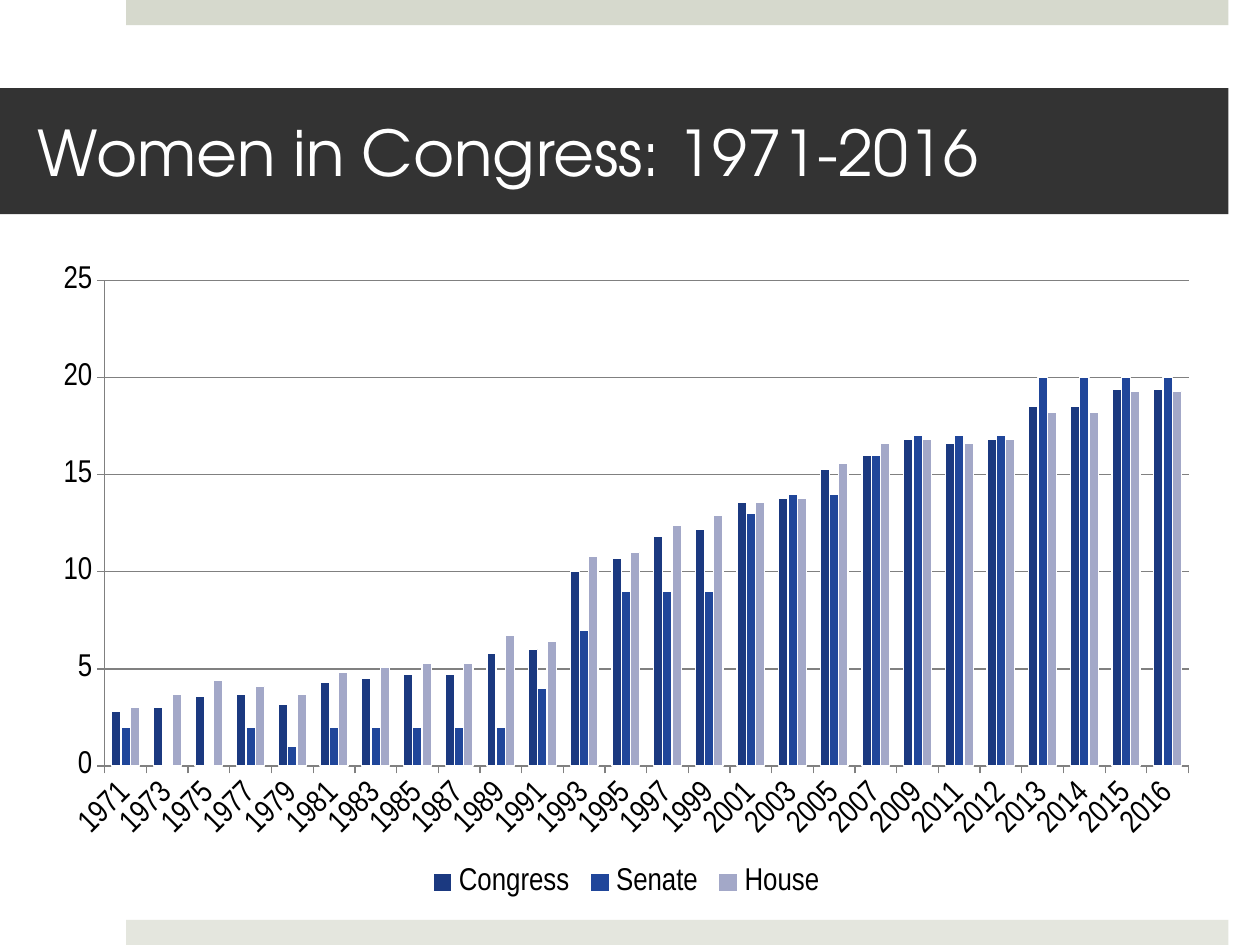
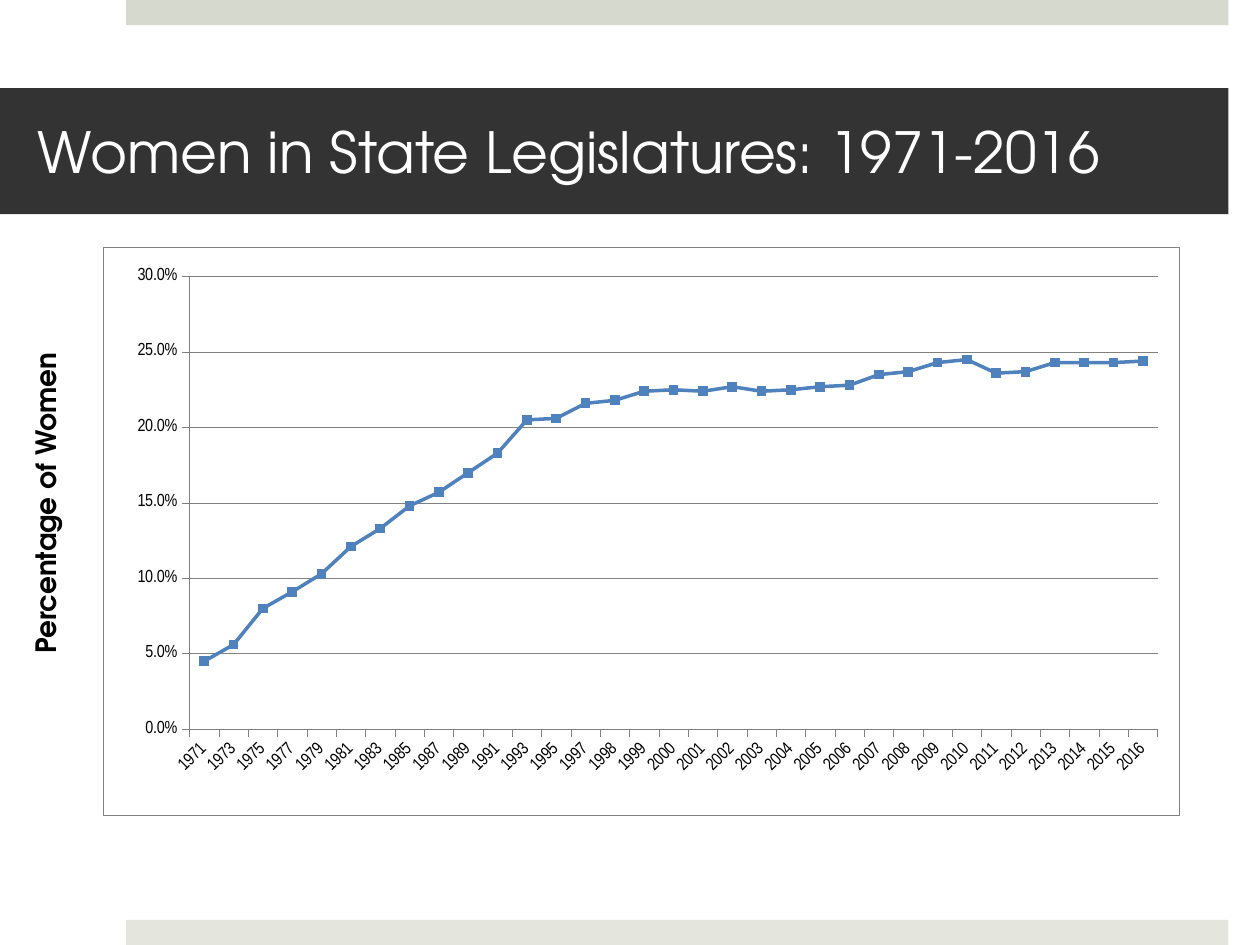
from lxml import etree
from pptx import Presentation
from pptx.chart.data import CategoryChartData
from pptx.dml.color import RGBColor
from pptx.enum.chart import XL_CHART_TYPE, XL_LEGEND_POSITION, XL_MARKER_STYLE, XL_TICK_MARK
from pptx.enum.shapes import MSO_SHAPE
from pptx.enum.text import MSO_ANCHOR, PP_ALIGN
from pptx.oxml import parse_xml
from pptx.oxml.ns import nsdecls, qn
from pptx.util import Inches, Pt

COLUMNS = XL_CHART_TYPE.COLUMN_CLUSTERED
LINE_MARKERS = XL_CHART_TYPE.LINE_MARKERS
BOTTOM = XL_LEGEND_POSITION.BOTTOM
SQUARE = XL_MARKER_STYLE.SQUARE
OUTSIDE = XL_TICK_MARK.OUTSIDE
RECTANGLE = MSO_SHAPE.RECTANGLE
MIDDLE = MSO_ANCHOR.MIDDLE
LEFT, CENTER = PP_ALIGN.LEFT, PP_ALIGN.CENTER

WHITE = RGBColor(0xFF, 0xFF, 0xFF)
BLACK = RGBColor(0x00, 0x00, 0x00)
CHARCOAL = RGBColor(0x33, 0x33, 0x33)
TOP_SAGE = RGBColor(0xD6, 0xD9, 0xCD)
BOTTOM_SAGE = RGBColor(0xE4, 0xE6, 0xDE)
GRAY = RGBColor(0x80, 0x80, 0x80)
NAVY = RGBColor(0x1B, 0x39, 0x80)
BLUE = RGBColor(0x20, 0x46, 0x9A)
LAVENDER = RGBColor(0xA3, 0xA8, 0xC8)
STEEL_BLUE = RGBColor(0x4F, 0x81, 0xBD)

HEADING_FONT = "TeX Gyre Adventor"
CHART_FONT = "Arial Narrow"

CONGRESS_YEARS = [*range(1971, 2012, 2), *range(2012, 2017)]
CONGRESS_SERIES = [
    ("Congress", NAVY, [
        2.8, 3, 3.6, 3.7, 3.2, 4.3, 4.5, 4.7, 4.7, 5.8, 6, 10, 10.7, 11.8, 12.2, 13.6,
        13.8, 15.3, 16, 16.8, 16.6, 16.8, 18.5, 18.5, 19.4, 19.4]),
    ("Senate", BLUE, [
        2, 0, 0, 2, 1, 2, 2, 2, 2, 2, 4, 7, 9, 9, 9, 13,
        14, 14, 16, 17, 17, 17, 20, 20, 20, 20]),
    ("House", LAVENDER, [
        3, 3.7, 4.4, 4.1, 3.7, 4.8, 5.1, 5.3, 5.3, 6.7, 6.4, 10.8, 11, 12.4, 12.9, 13.6,
        13.8, 15.6, 16.6, 16.8, 16.6, 16.8, 18.2, 18.2, 19.3, 19.3]),
]
STATE_YEARS = [*range(1971, 1998, 2), *range(1998, 2017)]
STATE_SERIES = [
    ("Series 1", STEEL_BLUE, [
        0.045, 0.056, 0.08, 0.091, 0.103, 0.121, 0.133, 0.148, 0.157, 0.17, 0.183,
        0.205, 0.206, 0.216, 0.218, 0.224, 0.225, 0.224, 0.227, 0.224, 0.225,
        0.227, 0.228, 0.235, 0.237, 0.243, 0.245, 0.236, 0.237, 0.243, 0.243,
        0.243, 0.244]),
]


def apply_format(target, values):
    for name, value in values.items():
        setattr(target, name, value)


def set_line(line, color, width):
    line.color.rgb = color
    line.width = Pt(width)


def add_band(slide, box, color):
    band = slide.shapes.add_shape(RECTANGLE, *map(Inches, box))
    band.shadow.inherit = False
    band.fill.solid()
    band.fill.fore_color.rgb = color
    band.line.fill.background()
    return band


def write_text(shape, text, alignment, color, **font_values):
    paragraph = shape.text_frame.paragraphs[0]
    paragraph.alignment = alignment
    run = paragraph.add_run()
    run.text = text
    run.font.color.rgb = color
    apply_format(run.font, {"name": HEADING_FONT, **font_values})


def add_title_slide(presentation, title, size):
    """Add a slide with the shared edge bands and title bar."""
    slide = presentation.slides.add_slide(presentation.slide_layouts[6])
    add_band(slide, (1, 0, 8.75, 0.2), TOP_SAGE)
    add_band(slide, (1, 7.3, 8.75, 0.2), BOTTOM_SAGE)
    title_bar = add_band(slide, (0, 0.7, 9.75, 1), CHARCOAL)
    apply_format(title_bar.text_frame, {
        "word_wrap": True, "vertical_anchor": MIDDLE,
        "margin_left": Inches(0.3), "margin_right": Inches(0.3)})
    write_text(title_bar, title, LEFT, WHITE, size=Pt(size))
    return slide


def place_plot(chart, plot_box):
    """Fix the inner plot area, given as fractions of the chart."""
    plot_area = chart._chartSpace.chart.plotArea
    for old_layout in plot_area.findall(qn("c:layout")):
        plot_area.remove(old_layout)
    layout = etree.Element(qn("c:layout"))
    manual = etree.SubElement(layout, qn("c:manualLayout"))
    settings = [("layoutTarget", "inner"), ("xMode", "edge"), ("yMode", "edge"),
                *zip("xywh", plot_box)]
    for name, value in settings:
        etree.SubElement(manual, qn(f"c:{name}")).set("val", str(value))
    plot_area.insert(0, layout)


def add_frame(chart, color, width):
    """Give the chart a white background and a border."""
    chart._chartSpace.chart.addnext(parse_xml(
        f'<c:spPr {nsdecls("c", "a")}>'
        f'<a:solidFill><a:srgbClr val="{WHITE}"/></a:solidFill>'
        f'<a:ln w="{Pt(width)}"><a:solidFill><a:srgbClr val="{color}"/></a:solidFill></a:ln>'
        '</c:spPr>'))


def add_year_chart(slide, kind, box, years, series, plot_box, size, top, step,
                   number_format, line_width):
    data = CategoryChartData(number_format=number_format)
    data.categories = [str(year) for year in years]
    for name, _, values in series:
        data.add_series(name, values)
    chart = slide.shapes.add_chart(kind, *map(Inches, box), data).chart
    apply_format(chart, {"has_title": False, "has_legend": False})
    apply_format(chart.font, {"name": CHART_FONT, "size": Pt(size)})
    chart.font.color.rgb = BLACK
    chart.plots[0].vary_by_categories = False
    place_plot(chart, plot_box)

    for axis in (chart.category_axis, chart.value_axis):
        axis.major_tick_mark = OUTSIDE
        set_line(axis.format.line, GRAY, line_width)
    chart.category_axis.has_major_gridlines = False
    label_body = chart.category_axis.tick_labels.font._element.getparent().getparent()
    label_body.getparent().find(qn("a:bodyPr")).set("rot", "-2700000")
    apply_format(chart.value_axis, {
        "minimum_scale": 0, "maximum_scale": top, "major_unit": step,
        "has_major_gridlines": True})
    set_line(chart.value_axis.major_gridlines.format.line, GRAY, line_width)
    apply_format(chart.value_axis.tick_labels, {
        "number_format": number_format, "number_format_is_linked": False})
    return chart


def add_congress_chart(slide, box):
    chart = add_year_chart(
        slide, COLUMNS, box, CONGRESS_YEARS, CONGRESS_SERIES,
        plot_box=(0.055, 0.042, 0.925, 0.747), size=18, top=25, step=5,
        number_format="General", line_width=0.75)
    apply_format(chart.plots[0], {"gap_width": 150, "overlap": 0})
    for columns, (_, color, _) in zip(chart.series, CONGRESS_SERIES):
        columns.format.fill.solid()
        columns.format.fill.fore_color.rgb = color
        set_line(columns.format.line, WHITE, 0.75)
    chart.has_legend = True
    apply_format(chart.legend, {"position": BOTTOM, "include_in_layout": False})


def add_state_chart(slide, box):
    chart = add_year_chart(
        slide, LINE_MARKERS, box, STATE_YEARS, STATE_SERIES,
        plot_box=(0.08, 0.052, 0.9, 0.797), size=10, top=0.3, step=0.05,
        number_format="0.0%", line_width=0.25)
    add_frame(chart, GRAY, 0.25)
    for line, (_, color, _) in zip(chart.series, STATE_SERIES):
        line.smooth = False
        set_line(line.format.line, color, 2)
        apply_format(line.marker, {"style": SQUARE, "size": 5})
        line.marker.format.fill.solid()
        line.marker.format.fill.fore_color.rgb = color
        line.marker.format.line.color.rgb = color


def add_side_label(slide, box, text):
    label = slide.shapes.add_textbox(*map(Inches, box))
    label.rotation = 270
    label.text_frame.word_wrap = True
    write_text(label, text, CENTER, BLACK, size=Pt(16), bold=True)


def main():
    presentation = Presentation()
    apply_format(presentation, {"slide_width": Inches(10), "slide_height": Inches(7.5)})

    congress = add_title_slide(presentation, "Women in Congress: 1971-2016", 36)
    add_congress_chart(congress, (0.32, 2.01, 9.3, 5.16))

    states = add_title_slide(presentation, "Women in State Legislatures: 1971-2016", 32.4)
    add_side_label(states, (-1.1, 3.81, 2.92, 0.37), "Percentage of Women")
    add_state_chart(states, (0.82, 1.96, 8.54, 4.51))

    presentation.save("out.pptx")


if __name__ == "__main__":
    main()
